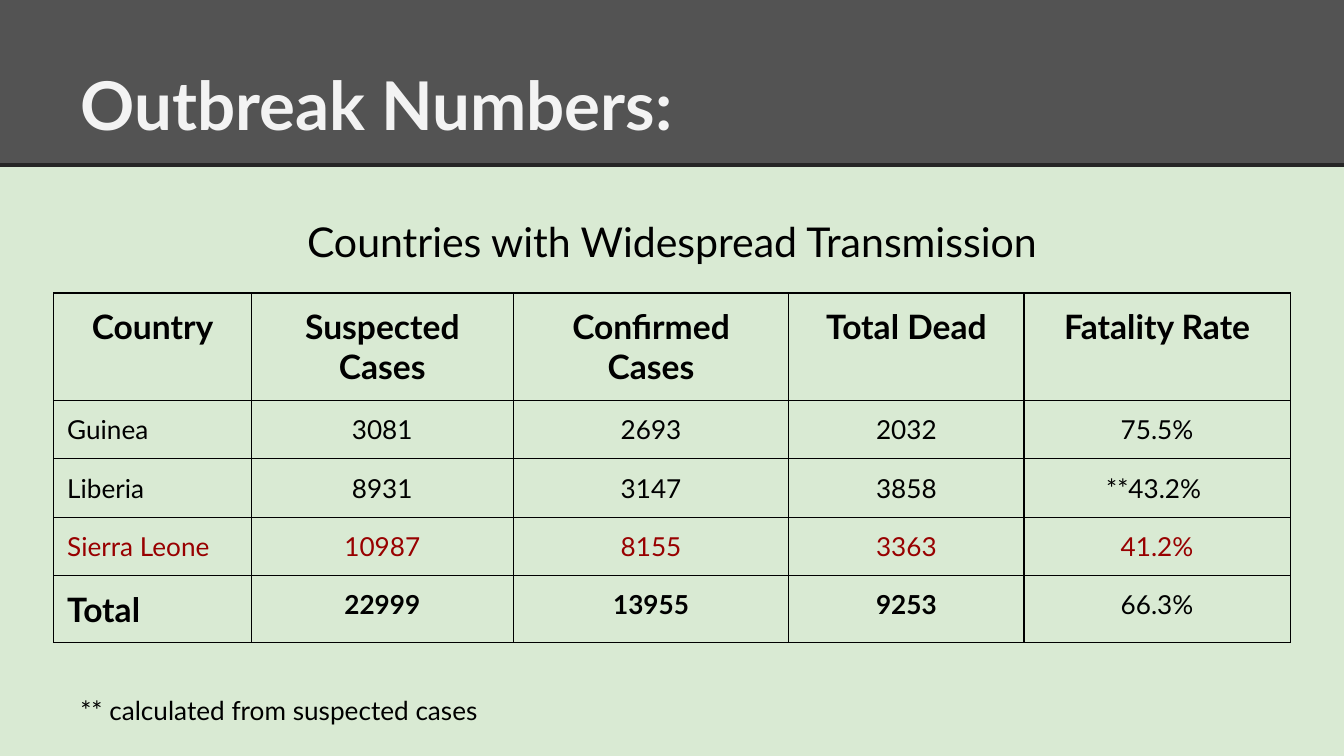
from lxml.etree import SubElement
from pptx import Presentation
from pptx.dml.color import RGBColor
from pptx.enum.shapes import MSO_CONNECTOR, MSO_SHAPE
from pptx.enum.text import MSO_ANCHOR, PP_ALIGN
from pptx.oxml.ns import qn
from pptx.util import Inches, Pt

WIDTH = 10
HEIGHT = WIDTH * 9 / 16
MARGIN = 0.4
INSET = 0.1
ROW_HEIGHT = 0.42
BLACK, RED = "000000", "980000"
HEADING = {"size": Pt(18), "bold": True}
BODY = {"size": Pt(14), "bold": False}
STRONG = {"size": Pt(14), "bold": True}

COLUMNS = [1.47, 1.95, 2.05, 1.75, 1.98]
ROWS = [
    ["Country", "Suspected Cases", "Confirmed Cases", "Total Dead", "Fatality Rate"],
    ["Guinea", "3081", "2693", "2032", "75.5%"],
    ["Liberia", "8931", "3147", "3858", "**43.2% "],
    ["Sierra Leone", "10987", "8155", "3363", "41.2%"],
    ["Total", "22999", "13955", "9253", "66.3%"],
]
ROW_FORMATS = [
    [HEADING] * 5,
    [BODY] * 5,
    [BODY] * 5,
    [BODY] * 5,
    [HEADING, STRONG, STRONG, STRONG, BODY],
]
ROW_COLOURS = [BLACK, BLACK, BLACK, RED, BLACK]


def colour(code):
    return RGBColor.from_string(code)


def write(frame, text, code, font, align=PP_ALIGN.LEFT):
    """Put one formatted paragraph into a text frame."""
    para = frame.paragraphs[0]
    para.alignment = align
    span = para.add_run()
    span.text = text
    span.font.name = "Lato"
    span.font.color.rgb = colour(code)
    for name, value in font.items():
        setattr(span.font, name, value)


def set_margins(holder):
    for side in ("left", "top", "right", "bottom"):
        setattr(holder, f"margin_{side}", Inches(INSET))


def add_text(page, box, text, code, font, align=PP_ALIGN.LEFT, anchor=MSO_ANCHOR.TOP):
    frame = page.shapes.add_textbox(*map(Inches, box)).text_frame
    frame.word_wrap = True
    frame.vertical_anchor = anchor
    set_margins(frame)
    write(frame, text, code, font, align)


def add_header(page, box):
    left, top, width, height = box
    band = page.shapes.add_shape(MSO_SHAPE.RECTANGLE, *map(Inches, box))
    band.shadow.inherit = False
    band.fill.solid()
    band.fill.fore_color.rgb = colour("535353")
    band.line.fill.background()

    bottom = top + height
    rule = page.shapes.add_connector(
        MSO_CONNECTOR.STRAIGHT, *map(Inches, (left, bottom, left + width, bottom)))
    rule.line.color.rgb = colour("262626")
    rule.line.width = Pt(2.25)
    SubElement(rule._element.spPr, qn("a:effectLst"))

    title_box = (left + 0.5, top + 0.23, width - 1, 0.94)
    add_text(page, title_box, "Outbreak Numbers:", "F3F3F3",
             {"size": Pt(36), "bold": True}, anchor=MSO_ANCHOR.BOTTOM)


def add_borders(cell):
    properties = cell._tc.get_or_add_tcPr()
    for index, side in enumerate(("lnL", "lnR", "lnT", "lnB")):
        border = properties.makeelement(qn(f"a:{side}"), {"w": str(Pt(0.75))})
        fill = SubElement(border, qn("a:solidFill"))
        SubElement(fill, qn("a:srgbClr"), val=BLACK)
        properties.insert(index, border)


def add_case_table(page, box):
    holder = page.shapes.add_table(len(ROWS), len(COLUMNS), *map(Inches, box))
    table = holder.table
    table.first_row = table.horz_banding = False
    for column, width in zip(table.columns, COLUMNS):
        column.width = Inches(width)
    for row in table.rows:
        row.height = Inches(ROW_HEIGHT)

    for r, (texts, formats, code) in enumerate(zip(ROWS, ROW_FORMATS, ROW_COLOURS)):
        for c, (text, font) in enumerate(zip(texts, formats)):
            cell = table.cell(r, c)
            set_margins(cell)
            cell.fill.background()
            add_borders(cell)
            is_label = c == 0 and r > 0
            align = PP_ALIGN.LEFT if is_label else PP_ALIGN.CENTER
            write(cell.text_frame, text, code, font, align)
    holder.width, holder.height = Inches(box[2]), Inches(box[3])


def main():
    deck = Presentation()
    deck.slide_width, deck.slide_height = Inches(WIDTH), Inches(HEIGHT)
    page = deck.slides.add_slide(deck.slide_layouts[6])
    page.background.fill.solid()
    page.background.fill.fore_color.rgb = colour("D9EAD3")

    content_width = WIDTH - 2 * MARGIN
    add_header(page, (0, 0, WIDTH, 1.23))
    add_case_table(page, (MARGIN, 2.18, content_width, 2.6))
    add_text(page, (0.5, 5.07, 3.94, 0.46), "** calculated from suspected cases",
             BLACK, {"size": Pt(14)})
    add_text(page, (MARGIN, 1.51, content_width, 0.65),
             "Countries with Widespread Transmission",
             BLACK, {"size": Pt(22)}, PP_ALIGN.CENTER)
    deck.save("out.pptx")


if __name__ == "__main__":
    main()
